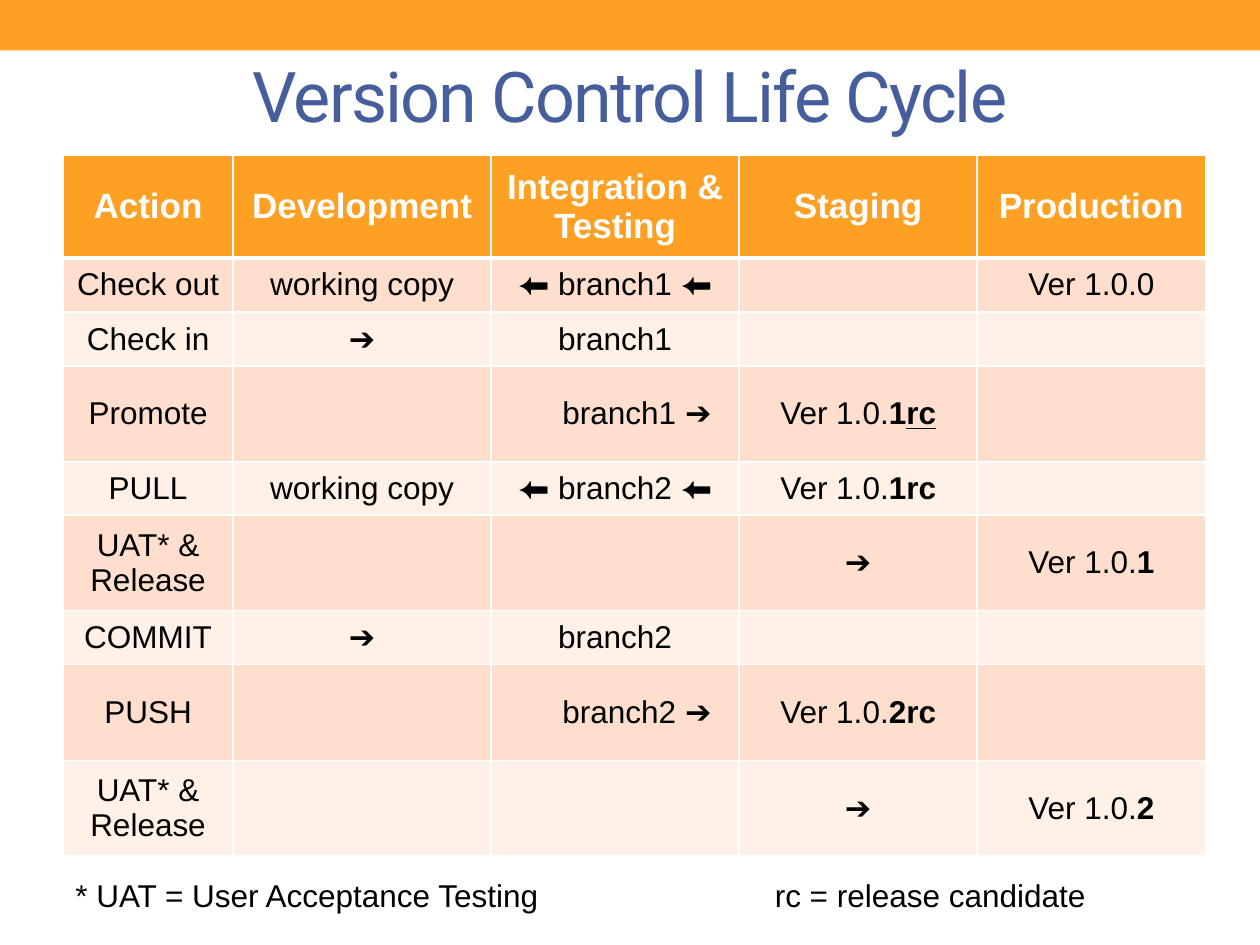
from lxml import etree
from pptx import Presentation
from pptx.dml.color import RGBColor
from pptx.enum.shapes import MSO_SHAPE
from pptx.enum.text import MSO_ANCHOR, PP_ALIGN
from pptx.oxml.ns import qn
from pptx.util import Cm, Pt

CENTER, LEFT = PP_ALIGN.CENTER, PP_ALIGN.LEFT
MIDDLE, TOP = MSO_ANCHOR.MIDDLE, MSO_ANCHOR.TOP
RECTANGLE = MSO_SHAPE.RECTANGLE

# Content: a cell is a list of (text, style) runs; styles are "b" and "u"
TITLE = "Version Control Life Cycle"
HEADINGS = ["Action", "Development", "Integration & Testing", "Staging", "Production"]


def plain(text):
    return [(text, "")] if text else []


def version(number, *suffix):
    return [("Ver 1.0.", ""), (number, "b"), *suffix]


ARROW = plain("➔")
WORKING_COPY = plain("working copy")
STEPS = [
    ("Check out", WORKING_COPY, plain("⬅ branch1 ⬅"), [], plain("Ver 1.0.0")),
    ("Check in", ARROW, plain("branch1"), [], []),
    ("Promote", [], plain("branch1 ➔"), version("1", ("rc", "bu")), []),
    ("PULL", WORKING_COPY, plain("⬅ branch2 ⬅"), version("1rc"), []),
    ("UAT* & Release", [], [], ARROW, version("1")),
    ("COMMIT", ARROW, plain("branch2"), [], []),
    ("PUSH", [], plain("branch2 ➔"), version("2rc"), []),
    ("UAT* & Release", [], [], ARROW, version("2")),
]
FOOTNOTES = ["* UAT = User Acceptance Testing", "rc = release candidate"]

# Layout in centimetres
SLIDE_WIDTH, SLIDE_HEIGHT = 25.4, 19.05
MARGIN = 1.27
TABLE_TOP = 3.12
COLUMN_WIDTHS = [3.43, 5.2, 5, 4.8, 4.6]
ROW_HEIGHTS = [2.08, 1.09, 1.09, 1.93, 1.07, 1.93, 1.09, 1.93, 1.93]
TABLE_WIDTH = sum(COLUMN_WIDTHS)
PUSHED_INDENT = 0.88
FOOTNOTE_TAB = 14.1

THEME = {
    "accent": "FDA023", "title": "465E9C", "text": "000000", "white": "FFFFFF",
    "bands": ["FEDFCD", "FFF0E8"],
    "title_font": "Roboto", "body_font": "Arial",
    "title_size": 40, "heading_size": 20, "body_size": 18,
    "line": 1, "heavy_line": 3,
}


def color(name):
    return RGBColor.from_string(THEME[name])


def add_run(paragraph, text, size, color_name, font="body_font", style=""):
    run = paragraph.add_run()
    run.text = text
    run.font.name = THEME[font]
    run.font.size = Pt(THEME[size])
    run.font.color.rgb = color(color_name)
    run.font.bold = "b" in style
    run.font.underline = "u" in style
    return run


def add_text_box(slide, top, width, height, anchor, alignment):
    shape = slide.shapes.add_textbox(Cm(MARGIN), Cm(top), Cm(width), Cm(height))
    shape.text_frame.word_wrap = True
    shape.text_frame.vertical_anchor = anchor
    paragraph = shape.text_frame.paragraphs[0]
    paragraph.alignment = alignment
    return paragraph


def set_borders(cell, top, bottom):
    properties = cell._tc.get_or_add_tcPr()
    widths = {"lnL": THEME["line"], "lnR": THEME["line"], "lnT": top, "lnB": bottom}
    for position, (tag, width) in enumerate(widths.items()):
        line = etree.Element(qn("a:" + tag), w=str(Pt(width)))
        fill = etree.SubElement(line, qn("a:solidFill"))
        etree.SubElement(fill, qn("a:srgbClr"), val=THEME["white"])
        properties.insert(position, line)


def fill_cell(cell, runs, row):
    heading = row == 0
    fill = THEME["accent"] if heading else THEME["bands"][(row - 1) % 2]
    cell.fill.solid()
    cell.fill.fore_color.rgb = RGBColor.from_string(fill)
    set_borders(cell, THEME["heavy_line" if row == 1 else "line"],
                THEME["heavy_line" if heading else "line"])
    cell.vertical_anchor = MIDDLE
    paragraph = cell.text_frame.paragraphs[0]
    paragraph.alignment = CENTER
    paragraph.font.size = Pt(THEME["body_size"])
    for text, style in runs:
        if text.startswith("branch") and text.endswith("➔"):
            paragraph._p.get_or_add_pPr().set("marL", str(Cm(PUSHED_INDENT)))
        add_run(paragraph, text, "heading_size" if heading else "body_size",
                "white" if heading else "text", style=style)


def add_life_cycle_table(slide):
    rows = [[[(heading, "b")] for heading in HEADINGS]]
    rows += [[plain(action), *stages] for action, *stages in STEPS]
    table = slide.shapes.add_table(
        len(rows), len(HEADINGS), Cm(MARGIN), Cm(TABLE_TOP),
        Cm(TABLE_WIDTH), Cm(sum(ROW_HEIGHTS))).table
    for column, width in zip(table.columns, COLUMN_WIDTHS):
        column.width = Cm(width)
    for row, (cells, height) in enumerate(zip(rows, ROW_HEIGHTS)):
        table.rows[row].height = Cm(height)
        for column, runs in enumerate(cells):
            fill_cell(table.cell(row, column), runs, row)


def main():
    presentation = Presentation()
    presentation.slide_width = Cm(SLIDE_WIDTH)
    presentation.slide_height = Cm(SLIDE_HEIGHT)
    slide = presentation.slides.add_slide(presentation.slide_layouts[6])

    # Top band
    band = slide.shapes.add_shape(RECTANGLE, 0, 0, Cm(SLIDE_WIDTH), Cm(1.02))
    band.shadow.inherit = False
    band.fill.solid()
    band.fill.fore_color.rgb = color("accent")
    band.line.fill.background()

    # Title
    paragraph = add_text_box(slide, 0.53, SLIDE_WIDTH - 2 * MARGIN, 2.74, MIDDLE, CENTER)
    run = add_run(paragraph, TITLE, "title_size", "title", "title_font")
    run.font._element.set("spc", "-100")

    add_life_cycle_table(slide)

    # Footnotes, the second one at a tab stop
    paragraph = add_text_box(slide, 17.53, TABLE_WIDTH, 1.02, TOP, LEFT)
    tabs = etree.SubElement(paragraph._p.get_or_add_pPr(), qn("a:tabLst"))
    etree.SubElement(tabs, qn("a:tab"), pos=str(Cm(FOOTNOTE_TAB)), algn="l")
    add_run(paragraph, "\t".join(FOOTNOTES), "body_size", "text")

    presentation.save("out.pptx")


if __name__ == "__main__":
    main()
